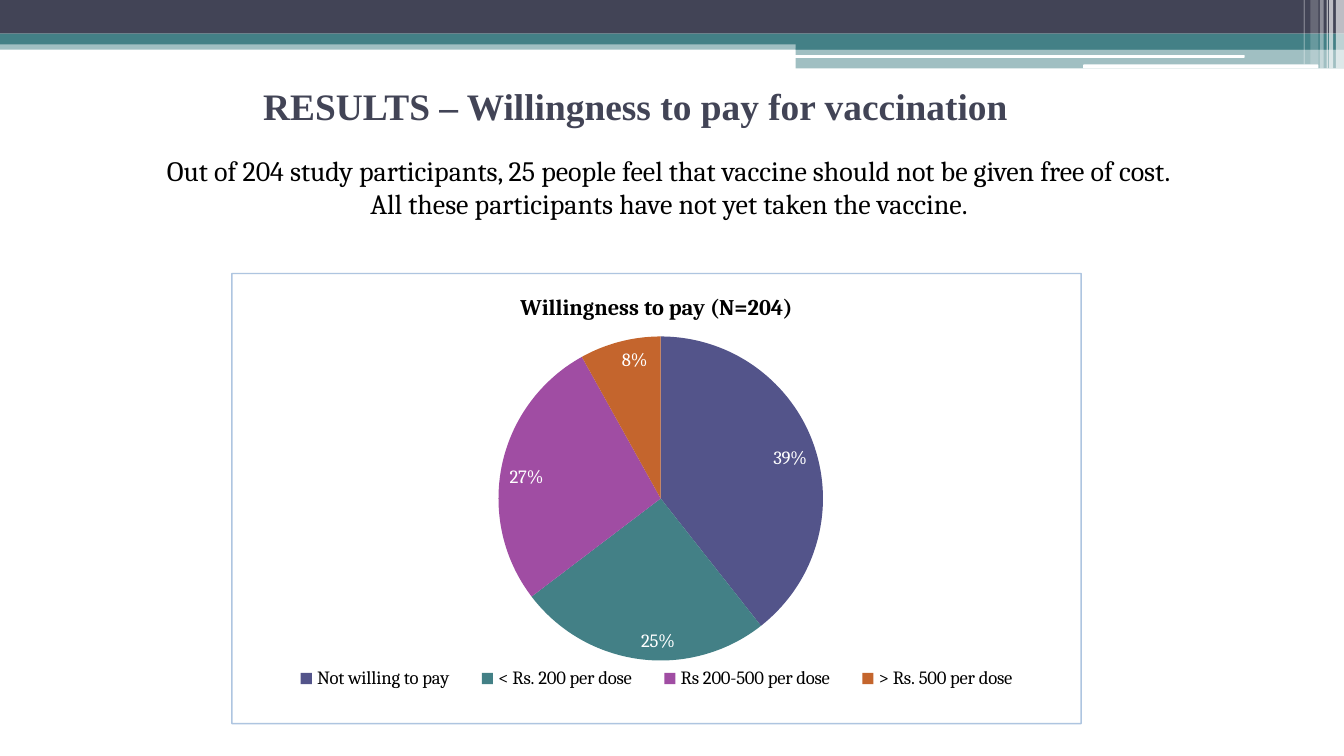
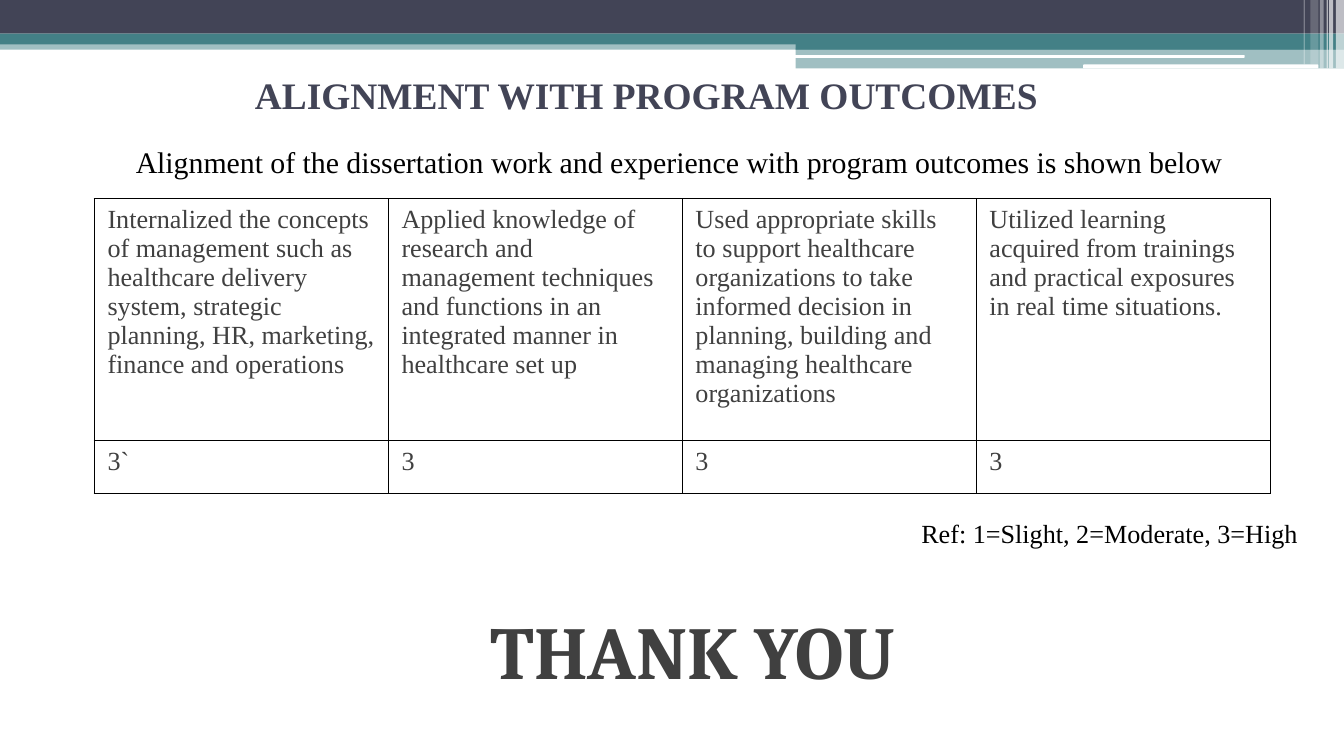
import pptx
import pptx.chart.data
import pptx.dml.color
import pptx.enum.chart
import pptx.enum.shapes
import pptx.enum.text
import pptx.oxml
import pptx.oxml.ns
import pptx.util
from dataclasses import dataclass

Inches, Pt, qn = pptx.util.Inches, pptx.util.Pt, pptx.oxml.ns.qn
ALIGN = pptx.enum.text.PP_ALIGN
ANCHOR = pptx.enum.text.MSO_ANCHOR
SHAPE = pptx.enum.shapes.MSO_SHAPE


@dataclass(frozen=True)
class Theme:
    navy: str = "424456"
    teal: str = "438086"
    white: str = "FFFFFF"
    black: str = "000000"
    grey: str = "404040"
    frame: str = "4F81BD"
    pie: tuple = ("53548A", "438086", "A04DA3", "C4652D")
    serif: str = "Times New Roman"
    text: str = "Cambria"
    title_size: int = 20
    lead_size: int = 16
    note_size: int = 15
    cell_size: int = 14
    chart_title_size: int = 12
    chart_size: int = 10
    closing_size: int = 40


T = Theme()

# left, top, width, height, colour, opacity in percent
BANDS = [
    (0, 0.3, 10, 0.07, T.teal, 50),
    (0, 0, 10, 0.25, T.navy, 100),
    (0, 0.25, 10, 0.08, T.teal, 100),
    (5.92, 0.3, 4.08, 0.07, T.teal, 100),
    (5.92, 0.36, 4.08, 0.15, T.teal, 50),
]
PILLS = [
    (5.91, 0.41, 3.35, 0.02, T.white, 100),
    (8.06, 0.48, 1.75, 0.03, T.white, 100),
]
# left, width, height, opacity in percent
STRIPES = [
    (9.94, 0.06, 0.51, 65),
    (9.89, 0.03, 0.51, 65),
    (9.87, 0.01, 0.51, 60),
    (9.82, 0.03, 0.51, 40),
    (9.75, 0.06, 0.48, 20),
    (9.7, 0.01, 0.48, 30),
]

PAY_TITLE = "RESULTS – Willingness to pay for vaccination"
PAY_NOTES = [
    "Out of 204 study participants, 25 people feel that vaccine should not be given free of cost. ",
    "All these participants have not yet taken the vaccine. ",
]
PAY_CHART_TITLE = "Willingness to pay (N=204)"
PAY_SHARES = {
    "Not willing to pay": 39,
    "< Rs. 200 per dose": 25,
    "Rs 200-500 per dose": 27,
    "> Rs. 500 per dose": 8,
}

OUTCOMES_TITLE = "ALIGNMENT WITH PROGRAM OUTCOMES"
OUTCOMES_LEAD = "Alignment of the dissertation work and experience with program outcomes is shown below"
OUTCOMES_KEY = "Ref: 1=Slight, 2=Moderate, 3=High"
OUTCOMES = [
    ("Internalized the concepts of management such as healthcare delivery system, "
     "strategic planning, HR, marketing, finance and operations", "3`"),
    ("Applied knowledge of research and management techniques and functions "
     "in an integrated manner in healthcare set up", "3"),
    ("Used appropriate skills to support healthcare organizations to take informed "
     "decision in planning, building and managing healthcare organizations", "3"),
    ("Utilized learning acquired from trainings and practical exposures "
     "in real time situations.", "3"),
]
CLOSING = "THANK YOU"


def rgb(value):
    return pptx.dml.color.RGBColor.from_string(value)


def xml(source):
    """Parse a fragment that uses the a: and c: prefixes."""
    head, tail = source.split(">", 1)
    slash = "/" if head.endswith("/") else ""
    head = head.rstrip("/")
    return pptx.oxml.parse_xml(f"{head} {pptx.oxml.ns.nsdecls('a', 'c')}{slash}>{tail}")


def style_font(font, size, color, name, bold=False):
    font.size, font.name, font.bold = Pt(size), name, bold
    font.color.rgb = rgb(color)


def write(tf, text, size=T.cell_size, color=T.black, font=T.serif, bold=False,
          align=ALIGN.LEFT, before=0):
    """Fill the empty first paragraph, or add one."""
    p = tf.paragraphs[0] if not tf.text else tf.add_paragraph()
    p.alignment, p.space_before = align, Pt(before)
    r = p.add_run()
    r.text = text
    style_font(r.font, size, color, font, bold)
    return p


def place(shape, left, top, width, height):
    shape.left, shape.top = Inches(left), Inches(top)
    shape.width, shape.height = Inches(width), Inches(height)
    shape.text_frame.word_wrap = True
    shape.text_frame.auto_size = pptx.enum.text.MSO_AUTO_SIZE.NONE
    return shape.text_frame


def add_title(s, text, left, top, height):
    tf = place(s.shapes.title, left, top, 9, height)
    tf.vertical_anchor = ANCHOR.MIDDLE
    write(tf, text, size=T.title_size, color=T.navy, bold=True, align=ALIGN.CENTER)


def add_text_box(s, lines, box, **fmt):
    tf = place(s.shapes.add_textbox(0, 0, 0, 0), *box)
    for text in lines:
        write(tf, text, font=T.text, align=ALIGN.CENTER, **fmt)


def add_band(s, kind, left, top, width, height, color, opacity):
    sp = s.shapes.add_shape(kind, Inches(left), Inches(top), Inches(width), Inches(height))
    sp.shadow.inherit = False
    sp.line.fill.background()
    sp.fill.solid()
    sp.fill.fore_color.rgb = rgb(color)
    if opacity < 100:
        clr = sp.element.spPr.find(qn("a:solidFill"))[0]
        clr.append(xml(f'<a:alpha val="{opacity * 1000}"/>'))
    return sp


def decorate_master(prs, s):
    """Draw the header bands on a slide, then move them to the master."""
    bands = [add_band(s, SHAPE.RECTANGLE, *b) for b in BANDS]
    bands += [add_band(s, SHAPE.ROUNDED_RECTANGLE, *b) for b in PILLS]
    bands += [add_band(s, SHAPE.RECTANGLE, left, 0, width, height, T.white, opacity)
              for left, width, height, opacity in STRIPES]
    for number, sp in enumerate(bands, 100):
        sp.element.nvSpPr.cNvPr.set("id", str(number))
        prs.slide_master.shapes.element.append(sp.element)


def manual_layout(x, y, w, h, inner=False):
    target = '<c:layoutTarget val="inner"/>' if inner else ""
    sizes = "".join(f'<c:{k} val="{v}"/>' for k, v in zip("xywh", (x, y, w, h)))
    return xml(f'<c:layout><c:manualLayout>{target}<c:xMode val="edge"/>'
               f'<c:yMode val="edge"/>{sizes}</c:manualLayout></c:layout>')


def add_pay_chart(s):
    data = pptx.chart.data.CategoryChartData()
    data.categories = list(PAY_SHARES)
    data.add_series("Series 1", list(PAY_SHARES.values()))
    chart = s.shapes.add_chart(pptx.enum.chart.XL_CHART_TYPE.PIE, Inches(1.72), Inches(2.03),
                               Inches(6.33), Inches(3.36), data).chart
    style_font(chart.font, T.chart_size, T.black, T.text)
    chart.has_title = True
    write(chart.chart_title.text_frame, PAY_CHART_TITLE, size=T.chart_title_size,
          font=T.text, bold=True, align=ALIGN.CENTER)
    chart.has_legend = True
    chart.legend.position = pptx.enum.chart.XL_LEGEND_POSITION.TOP
    chart.legend.include_in_layout = False

    plot = chart.plots[0]
    plot.vary_by_categories = True
    for i, color in enumerate(T.pie):
        fill = plot.series[0].points[i].format.fill
        fill.solid()
        fill.fore_color.rgb = rgb(color)
    plot.has_data_labels = True
    labels = plot.data_labels
    labels.show_percentage, labels.show_value = True, False
    labels.number_format, labels.number_format_is_linked = "0%", False
    labels.position = pptx.enum.chart.XL_LABEL_POSITION.INSIDE_END
    style_font(labels.font, T.chart_size, T.white, T.text)

    root = chart.element
    area = root.find(".//" + qn("c:plotArea"))
    for old in area.findall(qn("c:layout")):
        area.remove(old)
    area.insert(0, manual_layout(0.3, 0.14, 0.41, 0.72, inner=True))
    root.find(".//" + qn("c:legendPos")).addnext(manual_layout(0.05, 0.86, 0.9, 0.08))
    root.find(qn("c:chart")).addnext(xml(
        f'<c:spPr><a:noFill/><a:ln w="{Pt(0.75)}"><a:solidFill><a:srgbClr val="{T.frame}">'
        '<a:alpha val="46000"/></a:srgbClr></a:solidFill></a:ln></c:spPr>'))


def outline_cell(cell):
    tcPr = cell._tc.get_or_add_tcPr()
    for i, side in enumerate(("lnL", "lnR", "lnT", "lnB")):
        tcPr.insert(i, xml(f'<a:{side} w="{Pt(0.5)}"><a:solidFill><a:srgbClr val="{T.black}"/>'
                           f'</a:solidFill></a:{side}>'))


def add_outcomes_table(s):
    heights = (1.8, 0.39)
    table = s.shapes.add_table(len(heights), len(OUTCOMES), Inches(0.7), Inches(1.48),
                               Inches(8.75), Inches(sum(heights))).table
    table.first_row = table.horz_banding = False
    for row, height in zip(table.rows, heights):
        row.height = Inches(height)
    for col, entry in enumerate(OUTCOMES):
        for row, text in enumerate(entry):
            cell = table.cell(row, col)
            cell.fill.background()
            outline_cell(cell)
            write(cell.text_frame, text, color=T.grey)


def add_outcomes_body(s):
    tf = place(s.placeholders[1], 0.23, 1.02, 9.53, 4.38)
    lead = write(tf, OUTCOMES_LEAD, size=T.lead_size, align=ALIGN.CENTER, before=3)
    key = write(tf, OUTCOMES_KEY, align=ALIGN.RIGHT, before=181)
    for p in (lead, key):
        pPr = p._p.get_or_add_pPr()
        pPr.set("marL", str(Inches(0.4)))
        pPr.set("indent", str(Inches(-0.28)))
        pPr.append(xml("<a:buNone/>"))


def main():
    prs = pptx.Presentation()
    prs.slide_width, prs.slide_height = Inches(10), Inches(10 * 9 / 16)

    s = prs.slides.add_slide(prs.slide_layouts.get_by_name("Title Only"))
    decorate_master(prs, s)
    add_pay_chart(s)
    add_text_box(s, PAY_NOTES, (0, 1.09, 10, 0.61), size=T.note_size)
    add_title(s, PAY_TITLE, 0.23, 0.55, 0.47)

    s = prs.slides.add_slide(prs.slide_layouts.get_by_name("Title and Content"))
    add_title(s, OUTCOMES_TITLE, 0.31, 0.41, 0.59)
    add_outcomes_body(s)
    add_outcomes_table(s)
    add_text_box(s, [CLOSING], (2.81, 4.45, 4.69, 0.77),
                 size=T.closing_size, color=T.grey, bold=True)

    prs.save("out.pptx")


if __name__ == "__main__":
    main()
